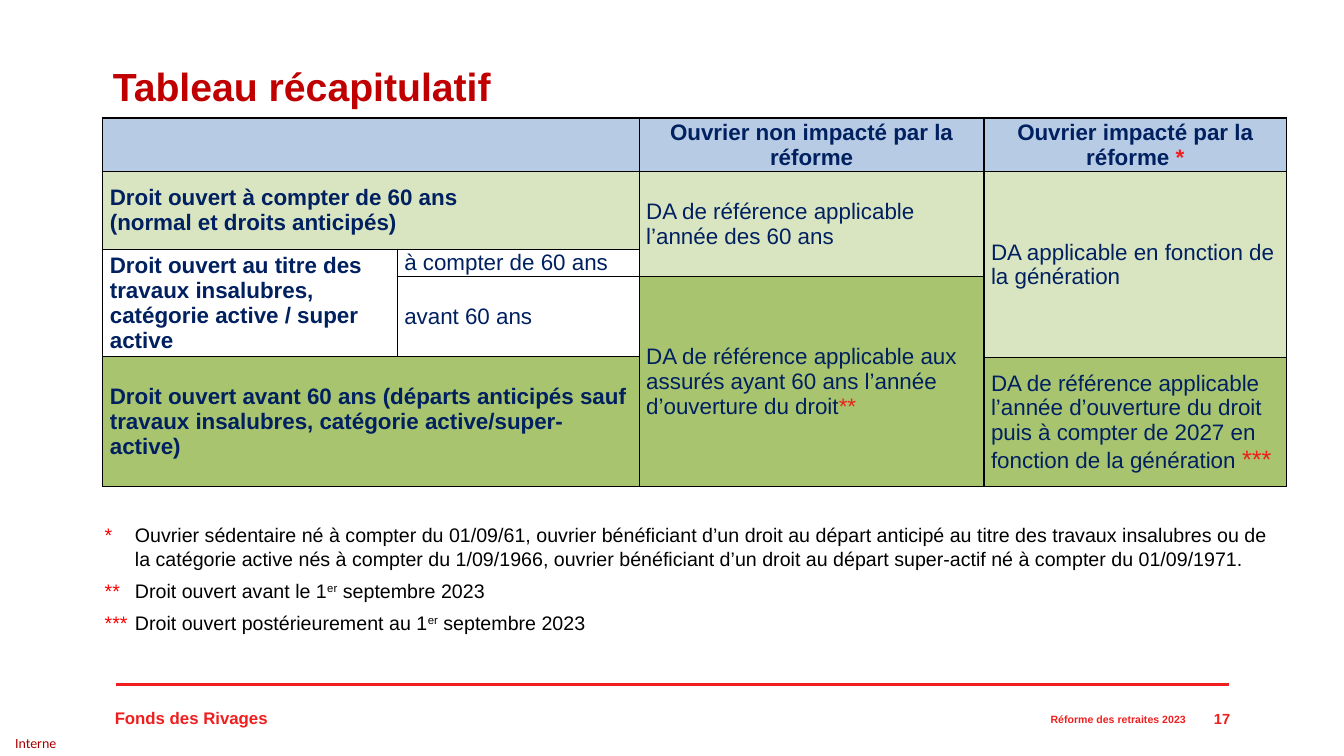
from lxml import etree
from pptx import Presentation
from pptx import util as u
from pptx.dml.color import RGBColor
from pptx.enum import shapes, text
from pptx.oxml.ns import qn

PX = 9144  # 100 px to the inch
RED, DARK_RED, STAR_RED = "F01E1E", "C00000", "FF0000"
NAVY, BLACK, WHITE = "002060", "000000", "FFFFFF"
BLUE, PALE_GREEN, GREEN = "B7CBE4", "D9E5C1", "A8C46F"
LEFT, CENTER, RIGHT = text.PP_ALIGN.LEFT, text.PP_ALIGN.CENTER, text.PP_ALIGN.RIGHT
TOP, MIDDLE = text.MSO_ANCHOR.TOP, text.MSO_ANCHOR.MIDDLE

COLUMNS = [292, 240, 342, 300]
ROWS = [49, 77, 25, 74, 1, 128]
# row, column, rows spanned, columns spanned, fill, bold, paragraphs, marker
CELLS = [
    (0, 0, 1, 2, BLUE, True, [], ""),
    (0, 2, 1, 1, BLUE, True, ["Ouvrier non impacté par la réforme"], ""),
    (0, 3, 1, 1, BLUE, True, ["Ouvrier impacté par la réforme"], " *"),
    (1, 0, 1, 2, PALE_GREEN, True,
     ["Droit ouvert à compter de 60 ans", "(normal et droits anticipés)"], ""),
    (1, 2, 2, 1, PALE_GREEN, False,
     ["DA de référence applicable l’année des 60 ans"], ""),
    (1, 3, 4, 1, PALE_GREEN, False,
     ["DA applicable en fonction de la génération"], ""),
    (2, 0, 2, 1, WHITE, True,
     ["Droit ouvert au titre des travaux insalubres, catégorie active / super active"], ""),
    (2, 1, 1, 1, WHITE, False, ["à compter de 60 ans"], ""),
    (3, 1, 1, 1, WHITE, False, ["avant 60 ans"], ""),
    (3, 2, 3, 1, GREEN, False,
     ["DA de référence applicable aux assurés ayant 60 ans l’année d’ouverture du droit"], "**"),
    (4, 0, 2, 2, GREEN, True,
     ["Droit ouvert avant 60 ans (départs anticipés sauf travaux insalubres, "
      "catégorie active/super-active)"], ""),
    (5, 3, 1, 1, GREEN, False,
     ["DA de référence applicable l’année d’ouverture du droit puis à compter de 2027 "
      "en fonction de la génération "], "***"),
]
# marker, then text, exponent and rest
NOTES = [
    ("*", "Ouvrier sédentaire né à compter du 01/09/61, ouvrier bénéficiant d’un droit au "
     "départ anticipé au titre des travaux insalubres ou de la catégorie active nés à compter "
     "du 1/09/1966, ouvrier bénéficiant d’un droit au départ super-actif né à compter du "
     "01/09/1971.", "", ""),
    ("**", "Droit ouvert avant le 1", "er", " septembre 2023"),
    ("***", "Droit ouvert postérieurement au 1", "er", " septembre 2023"),
]


def px(length):
    return u.Emu(length * PX)


def color(hex_code):
    return RGBColor.from_string(hex_code)


def add_run(paragraph, words, size, ink, bold=False, font="Arial"):
    run = paragraph.add_run()
    run.text = words
    run.font.name, run.font.size, run.font.bold = font, u.Pt(size), bold
    run.font.color.rgb = color(ink)
    return run


def add_frame(slide, box, anchor=TOP):
    frame = slide.shapes.add_textbox(*map(px, box)).text_frame
    frame.word_wrap = True
    frame.vertical_anchor = anchor
    return frame


def next_paragraph(frame, index):
    return frame.add_paragraph() if index else frame.paragraphs[0]


def add_title(slide, box):
    paragraph = add_frame(slide, box).paragraphs[0]
    paragraph.line_spacing = 0.9
    add_run(paragraph, "Tableau récapitulatif", 28, DARK_RED, True)


def add_borders(cell):
    properties = cell._tc.get_or_add_tcPr()
    for side in ("lnL", "lnR", "lnT", "lnB"):
        border = etree.SubElement(properties, qn(f"a:{side}"), w=str(u.Pt(1)))
        solid = etree.SubElement(border, qn("a:solidFill"))
        etree.SubElement(solid, qn("a:srgbClr"), val=BLACK)


def add_summary_table(slide, left, top):
    box = map(px, (left, top, sum(COLUMNS), sum(ROWS)))
    table = slide.shapes.add_table(len(ROWS), len(COLUMNS), *box).table
    table.first_row = table.horz_banding = False
    for column, width in zip(table.columns, COLUMNS):
        column.width = px(width)
    for row, height in zip(table.rows, ROWS):
        row.height = px(height)
    for cell in table.iter_cells():
        add_borders(cell)
        cell.margin_left = cell.margin_right = px(7)
        cell.margin_top = cell.margin_bottom = 0
        cell.vertical_anchor = MIDDLE

    for row, column, height, width, fill, bold, lines, marker in CELLS:
        cell = table.cell(row, column)
        if height * width > 1:
            cell.merge(table.cell(row + height - 1, column + width - 1))
        cell.fill.solid()
        cell.fill.fore_color.rgb = color(fill)
        for index, line in enumerate(lines):
            paragraph = next_paragraph(cell.text_frame, index)
            paragraph.alignment = LEFT if row else CENTER
            add_run(paragraph, line, 16, NAVY, bold)
        if marker:
            add_run(paragraph, marker, 18 if marker == "***" else 16, RED, bold)


def add_notes(slide, box):
    frame = add_frame(slide, box)
    for index, (marker, words, exponent, rest) in enumerate(NOTES):
        paragraph = next_paragraph(frame, index)
        paragraph.space_before = u.Pt(6)
        indents = paragraph._p.get_or_add_pPr()
        indents.set("marL", str(px(30)))
        indents.set("indent", str(px(-30)))
        add_run(paragraph, marker, 14, STAR_RED)
        add_run(paragraph, "\t" + words, 14, BLACK)
        if exponent:
            raised = add_run(paragraph, exponent, 14, BLACK)
            raised._r.get_or_add_rPr().set("baseline", "30000")
            add_run(paragraph, rest, 14, BLACK)


def add_footer(slide, left, top, width):
    right = left + width
    rule = slide.shapes.add_connector(
        shapes.MSO_CONNECTOR.STRAIGHT, px(left), px(top), px(right), px(top))
    rule.line.color.rgb = color(RED)
    rule.line.width = u.Pt(2)
    etree.SubElement(rule._element.spPr, qn("a:effectLst"))

    labels = [
        ("Fonds des Rivages", (left - 11, top + 18, 200, 30), TOP, LEFT, 12),
        ("Réforme des retraites 2023", (right - 427, top + 21, 394, 28), MIDDLE, RIGHT, 7.5),
        ("17", (right - 48, top + 18, 59, 31), MIDDLE, RIGHT, 10.5),
    ]
    for words, box, anchor, alignment, size in labels:
        paragraph = add_frame(slide, box, anchor).paragraphs[0]
        paragraph.alignment = alignment
        add_run(paragraph, words, size, RED, True)


def add_confidentiality(slide, box):
    frame = add_frame(slide, box, MIDDLE)
    frame.margin_left = frame.margin_right = frame.margin_top = frame.margin_bottom = 0
    add_run(frame.paragraphs[0], "Interne", 10, "A80000", font="Calibri")


def main():
    deck = Presentation()
    deck.slide_width, deck.slide_height = px(1333), px(750)
    slide = deck.slides.add_slide(deck.slide_layouts[6])
    add_footer(slide, 115, 679, 1104)
    add_confidentiality(slide, (15, 722, 56, 29))
    add_title(slide, (102, 62, 1142, 51))
    add_summary_table(slide, 102, 117)
    add_notes(slide, (94, 514, 1174, 121))
    deck.save("out.pptx")


if __name__ == "__main__":
    main()
